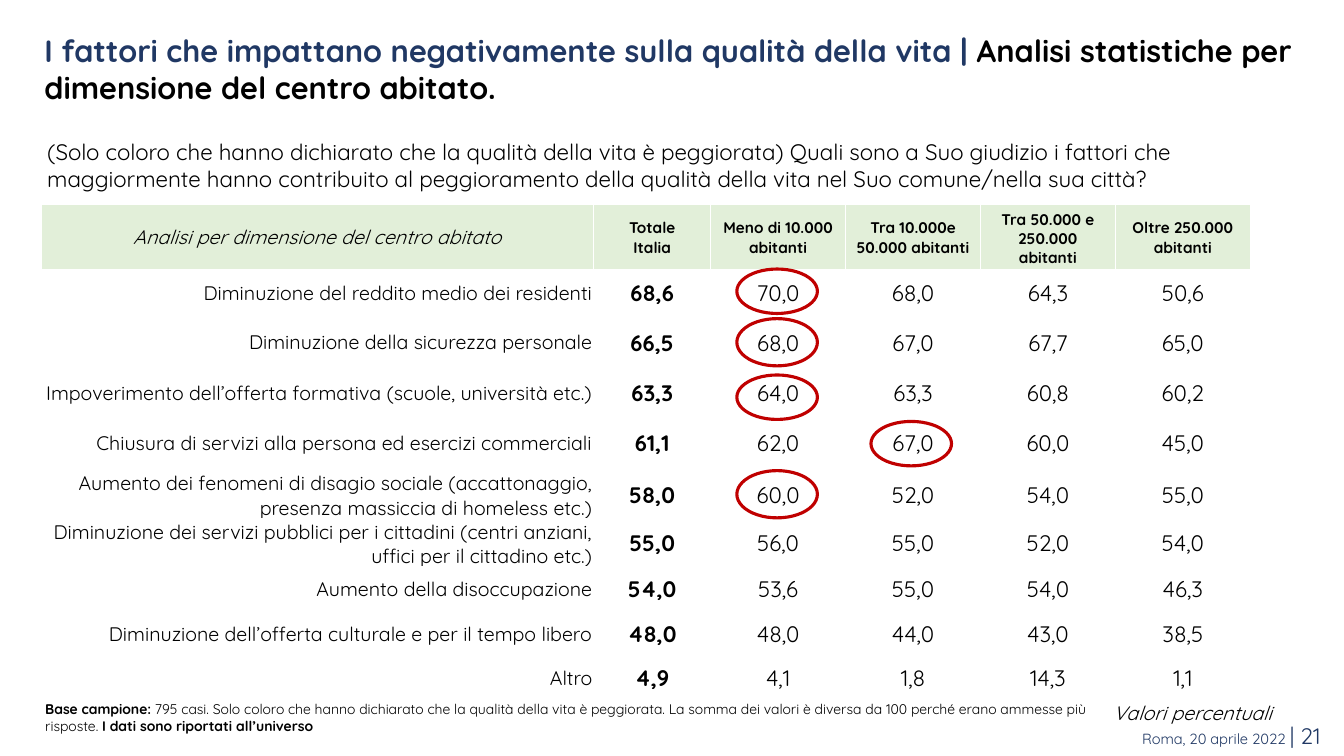
from pptx import Presentation
from pptx.dml.color import RGBColor
from pptx.enum.shapes import MSO_SHAPE
from pptx.enum.text import MSO_ANCHOR, PP_ALIGN
from pptx.oxml import parse_xml
from pptx.oxml.ns import nsdecls
from pptx.util import Cm, Pt

FONT = "Quicksand"
NAVY = RGBColor(0x20, 0x38, 0x64)
BLACK = RGBColor(0, 0, 0)
WHITE = RGBColor(0xFF, 0xFF, 0xFF)
GREEN = RGBColor(0xE2, 0xEF, 0xD9)
RED = RGBColor(0xC0, 0, 0)

LEFT, CENTER, RIGHT = PP_ALIGN.LEFT, PP_ALIGN.CENTER, PP_ALIGN.RIGHT
TOP, MIDDLE = MSO_ANCHOR.TOP, MSO_ANCHOR.MIDDLE
OVAL, RECT = MSO_SHAPE.OVAL, MSO_SHAPE.RECTANGLE

TITLE = "I fattori che impattano negativamente sulla qualità della vita | "
SUBJECT = "Analisi statistiche per dimensione del centro abitato."
QUERY = ("(Solo coloro che hanno dichiarato che la qualità della vita è peggiorata) "
         "Quali sono a Suo giudizio i fattori che maggiormente hanno contribuito al "
         "peggioramento della qualità della vita nel Suo comune/nella sua città?")
BASE = (" 795 casi. Solo coloro che hanno dichiarato che la qualità della vita è "
        "peggiorata. La somma dei valori è diversa da 100 perché erano ammesse più "
        "risposte. ")

HEADS = ["Analisi per dimensione del centro abitato", "Totale\nItalia",
         "Meno di 10.000 abitanti", "Tra 10.000e 50.000 abitanti",
         "Tra 50.000 e 250.000 abitanti", "Oltre 250.000 abitanti"]
ROWS = [
    ("Diminuzione del reddito medio dei residenti", "68,6 70,0 68,0 64,3 50,6"),
    ("Diminuzione della sicurezza personale", "66,5 68,0 67,0 67,7 65,0"),
    ("Impoverimento dell’offerta formativa (scuole, università etc.)",
     "63,3 64,0 63,3 60,8 60,2"),
    ("Chiusura di servizi alla persona ed esercizi commerciali",
     "61,1 62,0 67,0 60,0 45,0"),
    ("Aumento dei fenomeni di disagio sociale (accattonaggio, presenza massiccia "
     "di homeless etc.)", "58,0 60,0 52,0 54,0 55,0"),
    ("Diminuzione dei servizi pubblici per i cittadini (centri anziani, uffici per "
     "il cittadino etc.)", "55,0 56,0 55,0 52,0 54,0"),
    ("Aumento della disoccupazione", "54,0 53,6 55,0 54,0 46,3"),
    ("Diminuzione dell’offerta culturale e per il tempo libero",
     "48,0 48,0 44,0 43,0 38,5"),
    ("Altro", "4,9 4,1 1,8 14,3 1,1"),
]
WIDTHS = [13.92, 2.95] + [3.4] * 4
HEIGHTS = [1.63, 1.12, 1.37, 1.17, 1.37, 1.17, 1.17, 1.12, 1.12, 1.12]
# left, top and height of each ring, in cm
RINGS = [(18.57, 6.78, 1.12), (18.57, 8.03, 1.19), (18.57, 9.45, 1.12),
         (21.95, 10.62, 1.12), (18.57, 11.86, 1.19)]


def style(font, size, color=BLACK, bold=False, italic=False):
    font.name, font.size = FONT, Pt(size)
    font.bold, font.italic = bold, italic
    font.color.rgb = color


def write(frame, text, size, color=BLACK, bold=False, italic=False, align=LEFT):
    """Fill a frame with text of one style, a paragraph for each line."""
    frame.text = text
    for para in frame.paragraphs:
        para.alignment = align
        style(para.font, size, color, bold, italic)


def add_runs(frame, runs, align=LEFT):
    """Fill one paragraph with (text, size, color, bold) runs."""
    para = frame.paragraphs[0]
    para.alignment = align
    for text, *look in runs:
        run = para.add_run()
        run.text = text
        style(run.font, *look)


def place(shape, left, top, width, height):
    shape.left, shape.top = Cm(left), Cm(top)
    shape.width, shape.height = Cm(width), Cm(height)


def add_box(slide, left, top, width, height):
    box = slide.shapes.add_textbox(Cm(left), Cm(top), Cm(width), Cm(height))
    box.text_frame.word_wrap = True
    return box.text_frame


def add_form(slide, kind, left, top, width, height):
    form = slide.shapes.add_shape(kind, Cm(left), Cm(top), Cm(width), Cm(height))
    form.shadow.inherit = False
    return form


def add_title(slide):
    title = slide.shapes.title
    place(title, 0.94, 0.69, 32.79, 2.08)
    frame = title.text_frame
    frame.vertical_anchor = TOP
    frame.margin_left = frame.margin_right = Cm(0.18)
    frame.margin_top = frame.margin_bottom = Cm(0.1)
    add_runs(frame, [(TITLE, 22, NAVY, True), (SUBJECT, 22, BLACK, True)])


def add_ring(slide, left, top, height):
    ring = add_form(slide, OVAL, left, top, 2.03, height)
    ring.fill.background()
    ring.line.color.rgb = RED
    ring.line.width = Pt(2.25)


def set_edges(cell, base):
    """Draw white cell borders, the lower one base points wide."""
    props = cell._tc.get_or_add_tcPr()
    for spot, (side, width) in enumerate(zip("LRTB", (1, 1, 1, base))):
        props.insert(spot, parse_xml(
            f'<a:ln{side} {nsdecls("a")} w="{Pt(width)}"><a:solidFill>'
            f'<a:srgbClr val="{WHITE}"/></a:solidFill></a:ln{side}>'))


def fill_cell(cell, text, color, base, **look):
    cell.fill.solid()
    cell.fill.fore_color.rgb = color
    cell.vertical_anchor = MIDDLE
    set_edges(cell, base)
    write(cell.text_frame, text, **look)


def add_grid(slide):
    grid = slide.shapes.add_table(
        len(HEIGHTS), len(WIDTHS), Cm(1.04), Cm(5.16),
        Cm(sum(WIDTHS)), Cm(sum(HEIGHTS))).table
    grid.horz_banding = False
    for col, width in zip(grid.columns, WIDTHS):
        col.width = Cm(width)
    for row, height in zip(grid.rows, HEIGHTS):
        row.height = Cm(height)
    for c, head in enumerate(HEADS):
        fill_cell(grid.cell(0, c), head, GREEN, 3, size=11 if c else 14,
                  bold=c > 0, italic=c == 0, align=CENTER)
    for r, (label, values) in enumerate(ROWS, 1):
        for c, text in enumerate([label, *values.split()]):
            cell = grid.cell(r, c)
            cell.margin_left = cell.margin_right = cell.margin_top = Cm(0.03)
            cell.margin_bottom = 0
            fill_cell(cell, text, WHITE, 1, size=16 if c else 14,
                      bold=c == 1, align=CENTER if c else RIGHT)


def add_base(slide):
    note = add_form(slide, RECT, 0.94, 17.53, 27.18, 1.12)
    note.fill.solid()
    note.fill.fore_color.rgb = WHITE
    note.line.fill.background()
    frame = note.text_frame
    frame.word_wrap = True
    frame.vertical_anchor = TOP
    frame.margin_left = frame.margin_right = Cm(0.2)
    add_runs(frame, [("Base campione:", 10, BLACK, True), (BASE, 10, BLACK),
                     ("I dati sono riportati all’universo", 10, BLACK, True)])


def main():
    deck = Presentation()
    deck.slide_width, deck.slide_height = Cm(33.87), Cm(19.05)
    slide = deck.slides.add_slide(deck.slide_layouts[5])
    add_title(slide)
    write(add_box(slide, 0.94, 3.35, 32.18, 1.63), QUERY, 16)
    add_grid(slide)
    for ring in RINGS:
        add_ring(slide, *ring)
    add_base(slide)
    write(add_box(slide, 27.81, 17.53, 5.92, 0.86), "Valori percentuali", 14,
          italic=True)
    add_runs(add_box(slide, 15.93, 18.06, 17.6, 0.94),
             [("Roma, 20 aprile 2022 ", 10.5, NAVY), ("| 21", 16, NAVY)], RIGHT)
    deck.save("out.pptx")


if __name__ == "__main__":
    main()
